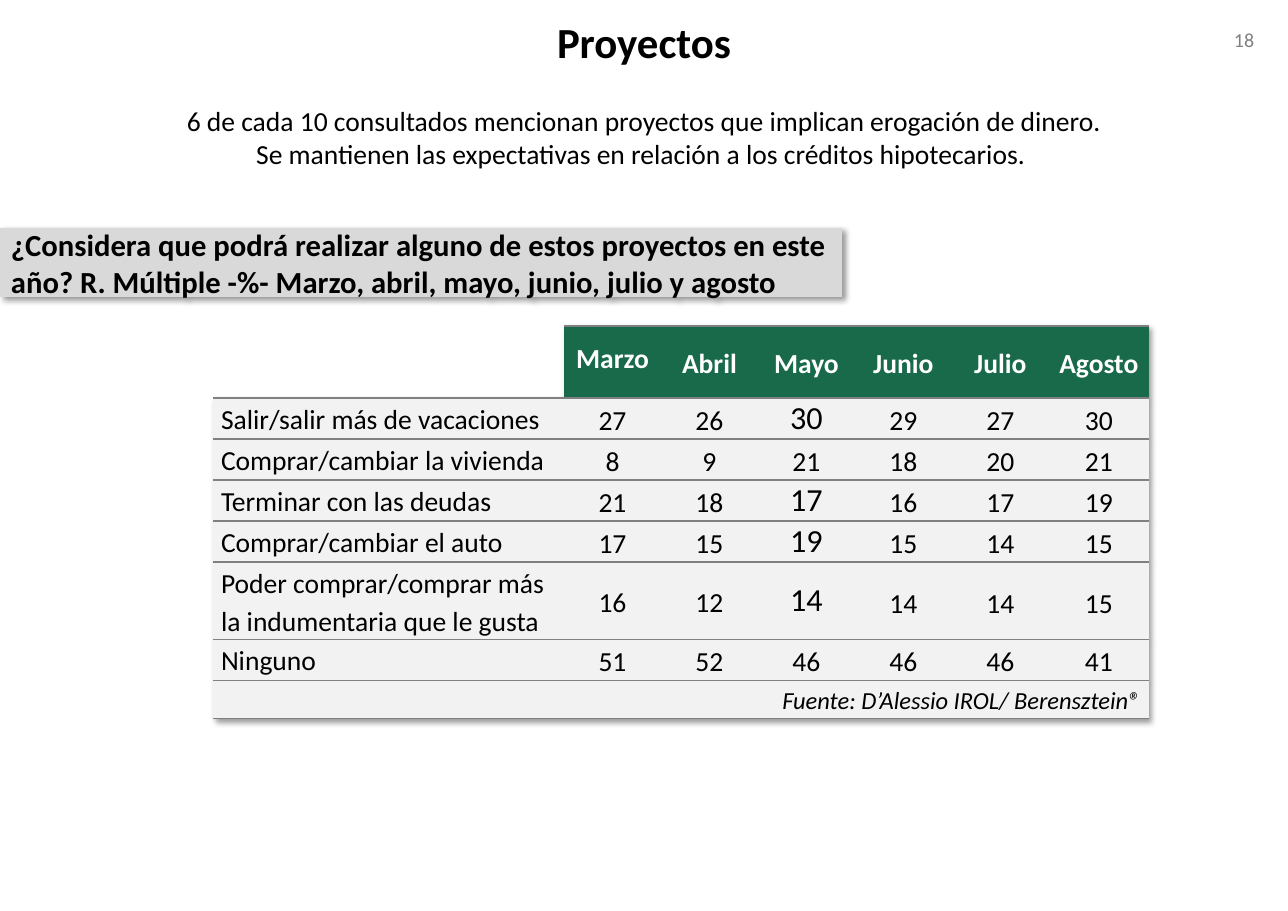
from lxml import etree
from pptx import Presentation
from pptx.dml.color import RGBColor
from pptx.enum.shapes import MSO_SHAPE
from pptx.enum.text import MSO_ANCHOR as Anchor, MSO_AUTO_SIZE as AutoSize, PP_ALIGN as Align
from pptx.oxml import parse_xml
from pptx.oxml.ns import nsdecls, qn
from pptx.util import Pt

PX = 8298  # EMU in one px
FONT = "Calibri"
BLACK = RGBColor(0x00, 0x00, 0x00)
WHITE = RGBColor(0xFF, 0xFF, 0xFF)
GREEN = RGBColor(0x19, 0x69, 0x4B)
GREY = RGBColor(0x80, 0x80, 0x80)
PALE = RGBColor(0xF2, 0xF2, 0xF2)
SILVER = RGBColor(0xD9, 0xD9, 0xD9)
NO_STYLE = "{2D5ABB26-0587-4C30-8999-92F81FD0307C}"

MONTHS = ["Marzo", "Abril", "Mayo", "Junio", "Julio", "Agosto"]
PROJECTS = [
    ("Salir/salir más de vacaciones", [27, 26, 30, 29, 27, 30]),
    ("Comprar/cambiar la vivienda", [8, 9, 21, 18, 20, 21]),
    ("Terminar con las deudas", [21, 18, 17, 16, 17, 19]),
    ("Comprar/cambiar el auto", [17, 15, 19, 15, 14, 15]),
    ("Poder comprar/comprar más la indumentaria que le gusta", [16, 12, 14, 14, 14, 15]),
    ("Ninguno", [51, 52, 46, 46, 46, 41]),
]
LARGE_ROWS = (1, 3, 4, 5)  # rows whose May figure is larger
COLUMNS = [351] + [97] * 5 + [100]
ROWS = [72, 41, 41, 41, 41, 76, 41, 38]


def px(*lengths):
    return [length * PX for length in lengths]


def place(shape, box):
    shape.left, shape.top, shape.width, shape.height = px(*box)


def set_margins(target, left, top, right, bottom):
    target.margin_left, target.margin_top, target.margin_right, target.margin_bottom = px(
        left, top, right, bottom)


def write(para, text, size, color=BLACK, align=Align.CENTER, bold=False, italic=False):
    para.alignment = align
    span = para.add_run()
    span.text = text
    font = span.font
    font.name, font.size, font.bold, font.italic = FONT, Pt(size), bold, italic
    font.color.rgb = color


def prepare(frame, anchor, margins=(11, 6, 11, 6)):
    frame.word_wrap = True
    frame.auto_size = AutoSize.NONE
    frame.vertical_anchor = anchor
    set_margins(frame, *margins)


def shadow_xml():
    return parse_xml(
        f'<a:effectLst {nsdecls("a")}><a:outerShdw blurRad="{Pt(4)}" dist="{Pt(3)}" '
        'dir="2700000" algn="tl" rotWithShape="0"><a:srgbClr val="000000">'
        '<a:alpha val="40000"/></a:srgbClr></a:outerShdw></a:effectLst>')


def add_heading(page, box):
    title = page.shapes.title
    place(title, box)
    prepare(title.text_frame, Anchor.MIDDLE, (12, 7, 12, 7))
    write(title.text_frame.paragraphs[0], "Proyectos", 28, bold=True)


def add_summary(page, box):
    body = page.placeholders[1]
    place(body, box)
    frame = body.text_frame
    prepare(frame, Anchor.MIDDLE)
    lines = ["6 de cada 10 consultados mencionan proyectos que implican erogación de dinero.",
             "Se mantienen las expectativas en relación a los créditos hipotecarios. "]
    for index, line in enumerate(lines):
        para = frame.add_paragraph() if index else frame.paragraphs[0]
        props = para._p.get_or_add_pPr()
        props.set("marL", "0")
        props.set("indent", "0")
        etree.SubElement(props, qn("a:buNone"))
        para.space_before = Pt(0)
        write(para, line, 18)


def add_page_number(page, box):
    frame = page.shapes.add_textbox(*px(*box)).text_frame
    prepare(frame, Anchor.TOP)
    write(frame.paragraphs[0], "18", 13, GREY)


def add_question(page, box):
    banner = page.shapes.add_shape(MSO_SHAPE.RECTANGLE, *px(*box))
    banner.fill.solid()
    banner.fill.fore_color.rgb = SILVER
    banner.line.fill.background()
    banner._element.spPr.append(shadow_xml())
    prepare(banner.text_frame, Anchor.MIDDLE)
    write(banner.text_frame.paragraphs[0],
          "¿Considera que podrá realizar alguno de estos proyectos en este año? "
          "R. Múltiple -%- Marzo, abril, mayo, junio, julio y agosto",
          20, align=Align.LEFT, bold=True)


def style_cell(cell, fill, edges=("lnT", "lnB")):
    if fill is None:
        cell.fill.background()
    else:
        cell.fill.solid()
        cell.fill.fore_color.rgb = fill
    props = cell._tc.get_or_add_tcPr()
    for index, edge in enumerate(edges):
        props.insert(index, parse_xml(
            f'<a:{edge} {nsdecls("a")} w="{Pt(1)}"><a:solidFill>'
            f'<a:srgbClr val="{GREY}"/></a:solidFill></a:{edge}>'))


def fill_cell(cell, text, size=18, margins=(8, 0, 8, 0), spacing=1.15,
              anchor=Anchor.MIDDLE, **look):
    set_margins(cell, *margins)
    cell.vertical_anchor = anchor
    para = cell.text_frame.paragraphs[0]
    para.line_spacing = spacing
    write(para, text, size, **look)


def add_results(page, box):
    frame = page.shapes.add_table(len(ROWS), len(COLUMNS), *px(*box))
    table = frame.table
    table.first_row = table.horz_banding = False
    props = table._tbl.tblPr
    props.find(qn("a:tableStyleId")).text = NO_STYLE
    props.insert(0, shadow_xml())
    for column, width in zip(table.columns, COLUMNS):
        column.width = width * PX
    for row, height in zip(table.rows, ROWS):
        row.height = height * PX

    # Month headings
    style_cell(table.cell(0, 0), None, ("lnB",))
    for c, month in enumerate(MONTHS, 1):
        cell = table.cell(0, c)
        style_cell(cell, GREEN)
        first = c == 1
        fill_cell(cell, month, color=WHITE, bold=True, spacing=Pt(18) if first else 1.15,
                  margins=(6, 0, 6, 0) if first else (8, 0, 8, 0))
    para = table.cell(0, 1).text_frame.paragraphs[0]
    para.space_before = para.space_after = Pt(2)

    # Projects and their percentages
    for r, (project, values) in enumerate(PROJECTS, 1):
        label = table.cell(r, 0)
        style_cell(label, PALE)
        fill_cell(label, project, anchor=Anchor.TOP, align=Align.LEFT)
        for c, value in enumerate(values, 1):
            cell = table.cell(r, c)
            style_cell(cell, PALE)
            large = c == 3 and r in LARGE_ROWS
            narrow = c > 3 and r < len(PROJECTS)
            fill_cell(cell, str(value), 21 if large else 18,
                      (1, 1, 1, 0) if narrow else (8, 0, 8, 0), 1.0 if large else 1.15)

    # Source line
    last = len(ROWS) - 1
    for c in range(len(COLUMNS)):
        style_cell(table.cell(last, c), PALE)
    source = table.cell(last, 0)
    source.merge(table.cell(last, len(COLUMNS) - 1))
    fill_cell(source, "Fuente: D’Alessio IROL/ Berensztein®", 16, align=Align.RIGHT, italic=True)


def main():
    deck = Presentation()
    deck.slide_width, deck.slide_height = px(1288, 911)
    page = deck.slides.add_slide(deck.slide_layouts[1])
    add_results(page, (213, 326, sum(COLUMNS), sum(ROWS)))
    add_summary(page, (0, 98, 1288, 78))
    add_page_number(page, (1195, 22, 98, 48))
    add_question(page, (0, 228, 842, 69))
    add_heading(page, (0, -11, 1288, 104))
    deck.save("out.pptx")


if __name__ == "__main__":
    main()
